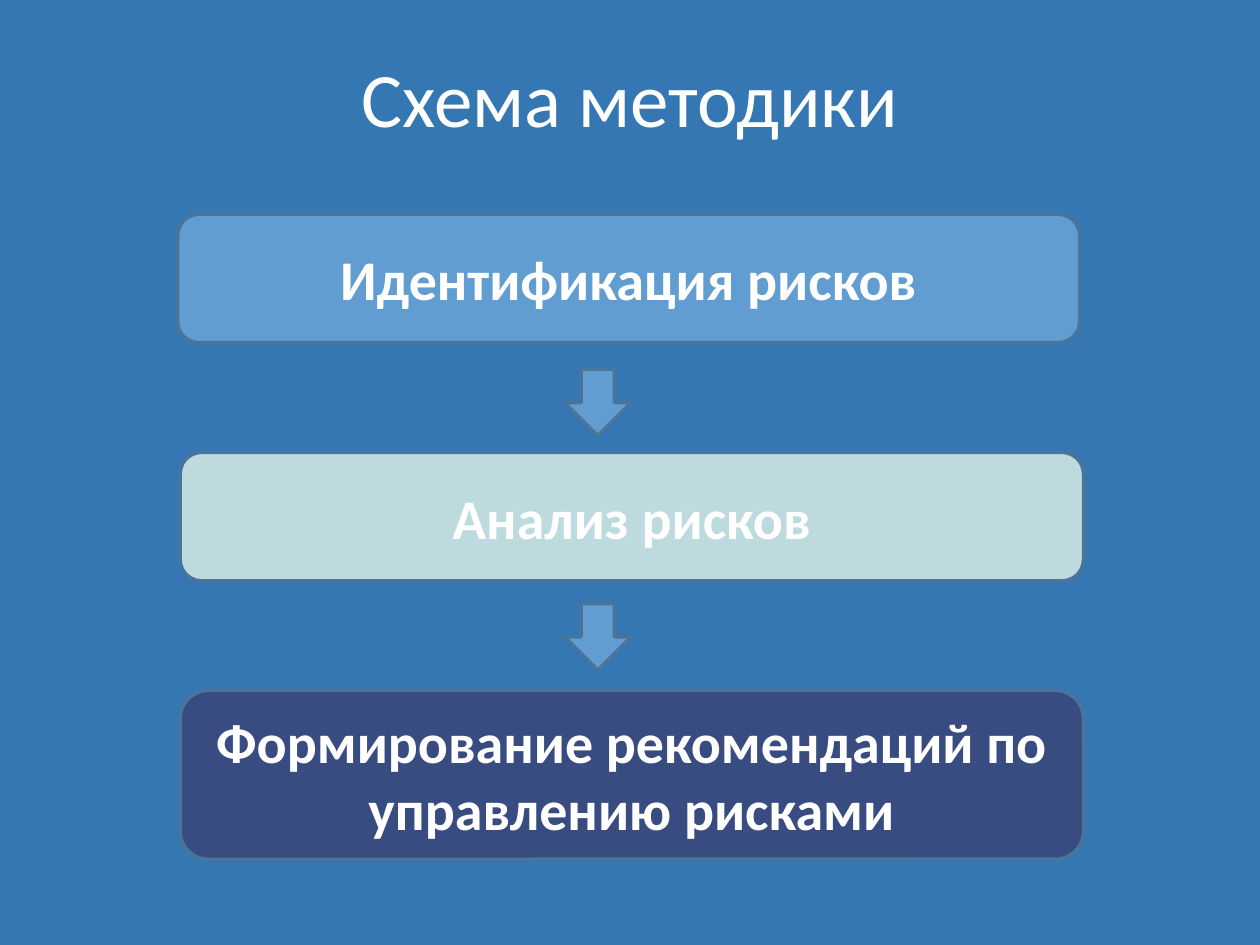
"""Build the risk method scheme slide."""
from dataclasses import dataclass

from pptx import Presentation
from pptx.dml.color import RGBColor as Color
from pptx.enum.shapes import MSO_SHAPE as Shape
from pptx.enum.text import MSO_ANCHOR as Anchor, PP_ALIGN as Align
from pptx.util import Inches, Pt

TITLE = "Схема методики"
STEPS = [
    ("Идентификация рисков", "629DD1", 1.41, 7.16, 1.02),
    ("Анализ рисков", "BDDADF", 1.43, 7.17, 1.02),
    ("Формирование рекомендаций по управлению рисками", "384C81", 1.43, 7.17, 1.34),
]
ARROWS = [2.93, 4.79]
TOP, PITCH = 1.7, 1.89
MID, SIDE = 4.48, 0.53


@dataclass(frozen=True)
class Theme:
    font: str = "Calibri"
    back: str = "3477B2"
    ink: str = "FFFFFF"
    edge: str = "49749B"
    arrow: str = "629DD1"
    head: int = 44
    body: int = 32
    line: int = 2


THEME = Theme()


def write(shape, text, size=THEME.body, bold=False):
    frame = shape.text_frame
    frame.word_wrap = True
    frame.vertical_anchor = Anchor.MIDDLE
    para = frame.paragraphs[0]
    para.alignment = Align.CENTER
    run = para.add_run()
    run.text = text
    font = run.font
    font.name, font.size, font.bold = THEME.font, Pt(size), bold
    font.color.rgb = Color.from_string(THEME.ink)


def draw(slide, kind, box, fill):
    shape = slide.shapes.add_shape(kind, *map(Inches, box))
    shape.shadow.inherit = False
    shape.fill.solid()
    shape.fill.fore_color.rgb = Color.from_string(fill)
    shape.line.color.rgb = Color.from_string(THEME.edge)
    shape.line.width = Pt(THEME.line)
    return shape


def main():
    deck = Presentation()
    deck.slide_width, deck.slide_height = Inches(10), Inches(7.5)
    slide = deck.slides.add_slide(deck.slide_layouts[5])
    back = slide.background.fill
    back.solid()
    back.fore_color.rgb = Color.from_string(THEME.back)

    title = slide.shapes.title
    title.left, title.top = Inches(0.5), Inches(0.3)
    title.width, title.height = Inches(9), Inches(0.93)
    write(title, TITLE, size=THEME.head)

    for row, (text, fill, left, wide, high) in enumerate(STEPS):
        box = left, TOP + row * PITCH, wide, high
        write(draw(slide, Shape.ROUNDED_RECTANGLE, box, fill), text, bold=True)
    for top in ARROWS:
        draw(slide, Shape.DOWN_ARROW, (MID, top, SIDE, SIDE), THEME.arrow)

    deck.save("out.pptx")


if __name__ == "__main__":
    main()
